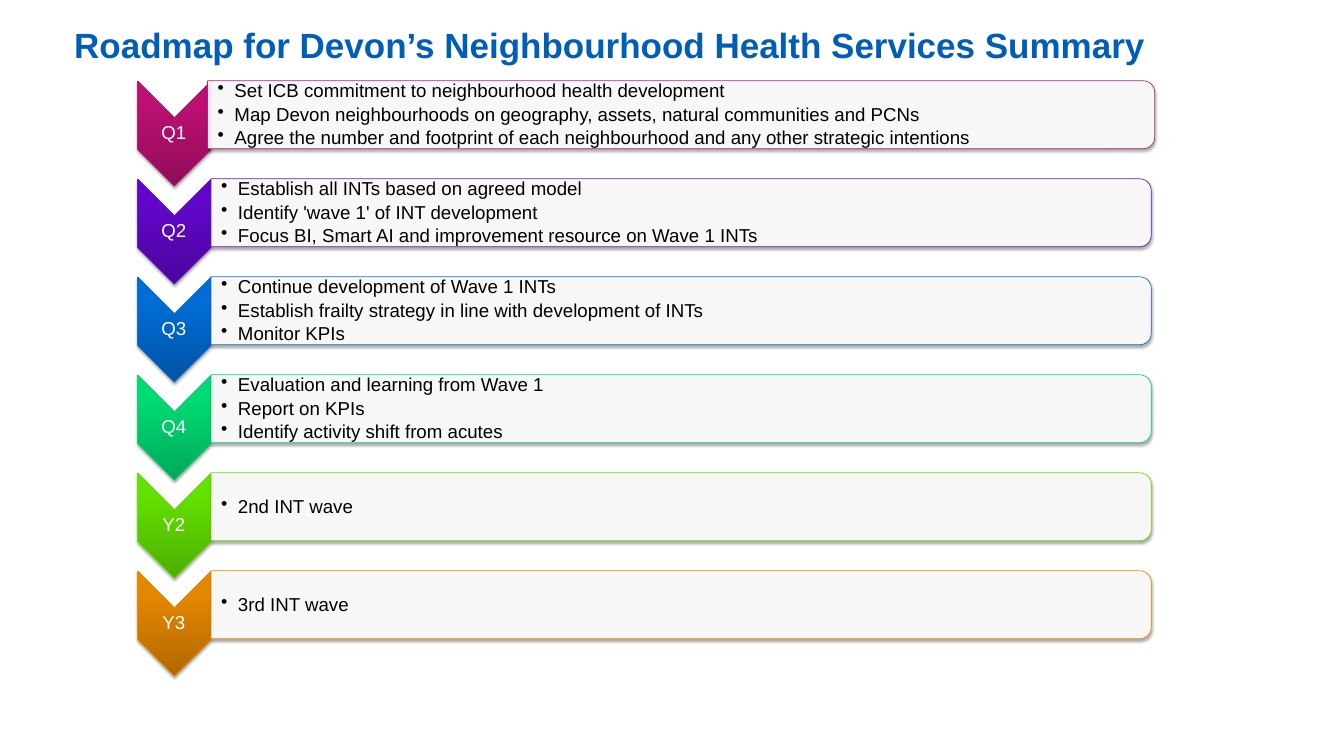
import pptx
import pptx.util
import pptx.oxml
import pptx.oxml.ns
import pptx.dml.color
import pptx.enum.shapes
import pptx.enum.text

PX = 9525  # 96 px to the inch
FONT = "Arial"
PITCH = 140
TITLE = "Roadmap for Devon’s Neighbourhood Health Services Summary"

# label, line colour, gradient from bottom to top, actions
STAGES = [
    ("Q1", "AE2573", ("910C58", "BD1072", "C10D73"), [
        "Set ICB commitment to neighbourhood health development",
        "Map Devon neighbourhoods on geography, assets, natural communities and PCNs",
        "Agree the number and footprint of each neighbourhood and any other strategic intentions"]),
    ("Q2", "661EBA", ("4B059C", "6107CB", "6103CF"), [
        "Establish all INTs based on agreed model",
        "Identify 'wave 1' of INT development",
        "Focus BI, Smart AI and improvement resource on Wave 1 INTs"]),
    ("Q3", "1770C6", ("0054A5", "006DD7", "006DD8"), [
        "Continue development of Wave 1 INTs",
        "Establish frailty strategy in line with development of INTs",
        "Monitor KPIs"]),
    ("Q4", "10D376", ("00A959", "00DC73", "00DD74"), [
        "Evaluation and learning from Wave 1",
        "Report on KPIs",
        "Identify activity shift from acutes"]),
    ("Y2", "68E008", ("4DAD00", "64E100", "64E200"), ["2nd INT wave"]),
    ("Y3", "ED8B00", ("B16800", "E68700", "E78700"), ["3rd INT wave"]),
]

NS = pptx.oxml.ns.nsdecls("a")
SHADOW = (f'<a:effectLst {NS}><a:outerShdw blurRad="40000" dist="23000" dir="5400000" '
          'rotWithShape="0"><a:srgbClr val="000000"><a:alpha val="35000"/></a:srgbClr>'
          '</a:outerShdw></a:effectLst>')


def px(n):
    return pptx.util.Emu(int(n * PX))


def color(code):
    return pptx.dml.color.RGBColor.from_string(code)


def turned(slide, kind, mid_x, mid_y, wide, high, fill, line):
    """Add a shape turned by 90 degrees; wide and high are its size before the turn."""
    shape = slide.shapes.add_shape(kind, px(mid_x - wide / 2), px(mid_y - high / 2),
                                   px(wide), px(high))
    shape.rotation = 90
    shape.line.color.rgb = color(line)
    shape.line.width = pptx.util.Pt(0.75)
    props = shape.fill._xPr
    props.find(pptx.oxml.ns.qn("a:prstGeom")).addnext(pptx.oxml.parse_xml(fill))
    props.append(pptx.oxml.parse_xml(SHADOW))


def gradient(codes):
    stops = "".join(f'<a:gs pos="{pos}"><a:srgbClr val="{code}"/></a:gs>'
                    for pos, code in zip((0, 80000, 100000), codes))
    return (f'<a:gradFill {NS} rotWithShape="0"><a:gsLst>{stops}</a:gsLst>'
            '<a:lin ang="16200000" scaled="0"/></a:gradFill>')


def bullet(para):
    props = para._p.get_or_add_pPr()
    props.set("marL", "228600")
    props.set("indent", "-228600")
    props.append(pptx.oxml.parse_xml(f'<a:buChar {NS} char="•"/>'))


def write(slide, box, lines, size, ink, inset=(1, 1), after=None, bullets=False,
          bold=False, align=None):
    """Add a text box; inset is (left, other sides), after is the space after lines."""
    frame = slide.shapes.add_textbox(*map(px, box)).text_frame
    frame.word_wrap = True
    frame.vertical_anchor = pptx.enum.text.MSO_ANCHOR.MIDDLE
    frame.margin_left = px(inset[0])
    frame.margin_top = frame.margin_right = frame.margin_bottom = px(inset[1])
    for i, line in enumerate(lines):
        para = frame.paragraphs[0] if i == 0 else frame.add_paragraph()
        para.text = line
        if bullets:
            bullet(para)
        if align is not None:
            para.alignment = align
        if after is not None:
            para.line_spacing = 0.9
            para.space_after = pptx.util.Pt(after)
        para.font.name = FONT
        para.font.size = pptx.util.Pt(size)
        para.font.bold = bold
        para.font.color.rgb = color(ink)


def main():
    deck = pptx.Presentation()
    deck.slide_width, deck.slide_height = px(1920), px(1080)
    slide = deck.slides.add_slide(deck.slide_layouts[6])
    kinds = pptx.enum.shapes.MSO_SHAPE
    center = pptx.enum.text.PP_ALIGN.CENTER

    write(slide, (96, 12, 1728, 104), [TITLE], 37.5, "005EB8", inset=(10, 5), bold=True)
    for i, (label, line, codes, actions) in enumerate(STAGES):
        y = 164 + i * PITCH  # middle of the bar
        extra = 5 if i == 0 else 0  # the first bar is longer at both ends
        long = 1343 + 2 * extra
        left = 301 - extra
        turned(slide, kinds.CHEVRON, 249, y + 27, 150, 105, gradient(codes), line)
        write(slide, (196, y + 4, 105, 45), [label], 20, "FFFFFF", after=8, align=center)
        glass = (f'<a:solidFill {NS}><a:srgbClr val="FFFFFF"><a:alpha val="90000"/>'
                 '</a:srgbClr></a:solidFill>')
        turned(slide, kinds.ROUND_2_SAME_RECTANGLE, 973, y, 97, long, glass, line)
        write(slide, (left, y - 43, long - 4, 87), actions, 20, "000000",
              inset=(15, 1), after=3.6, bullets=True)
    deck.save("out.pptx")


if __name__ == "__main__":
    main()
